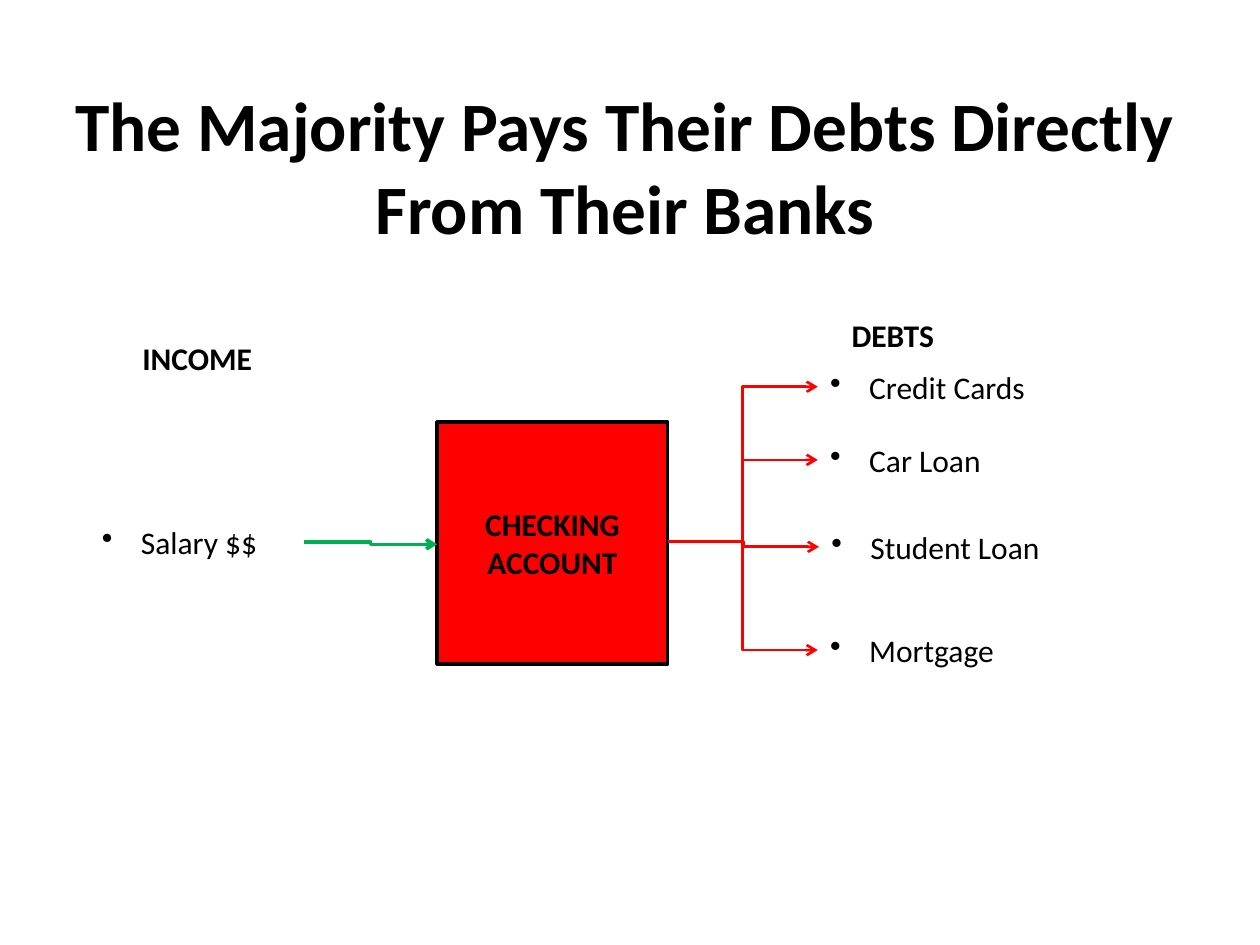
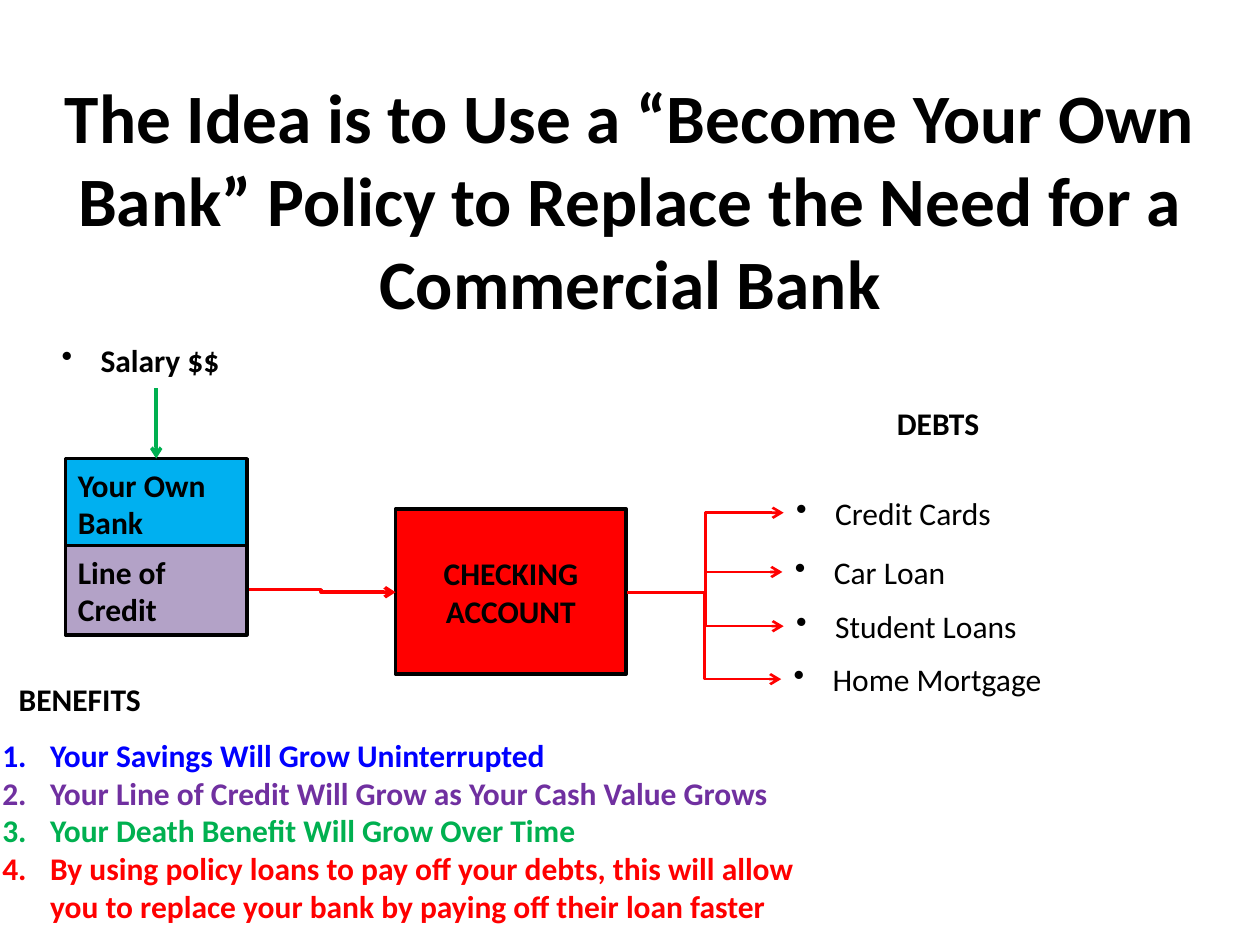
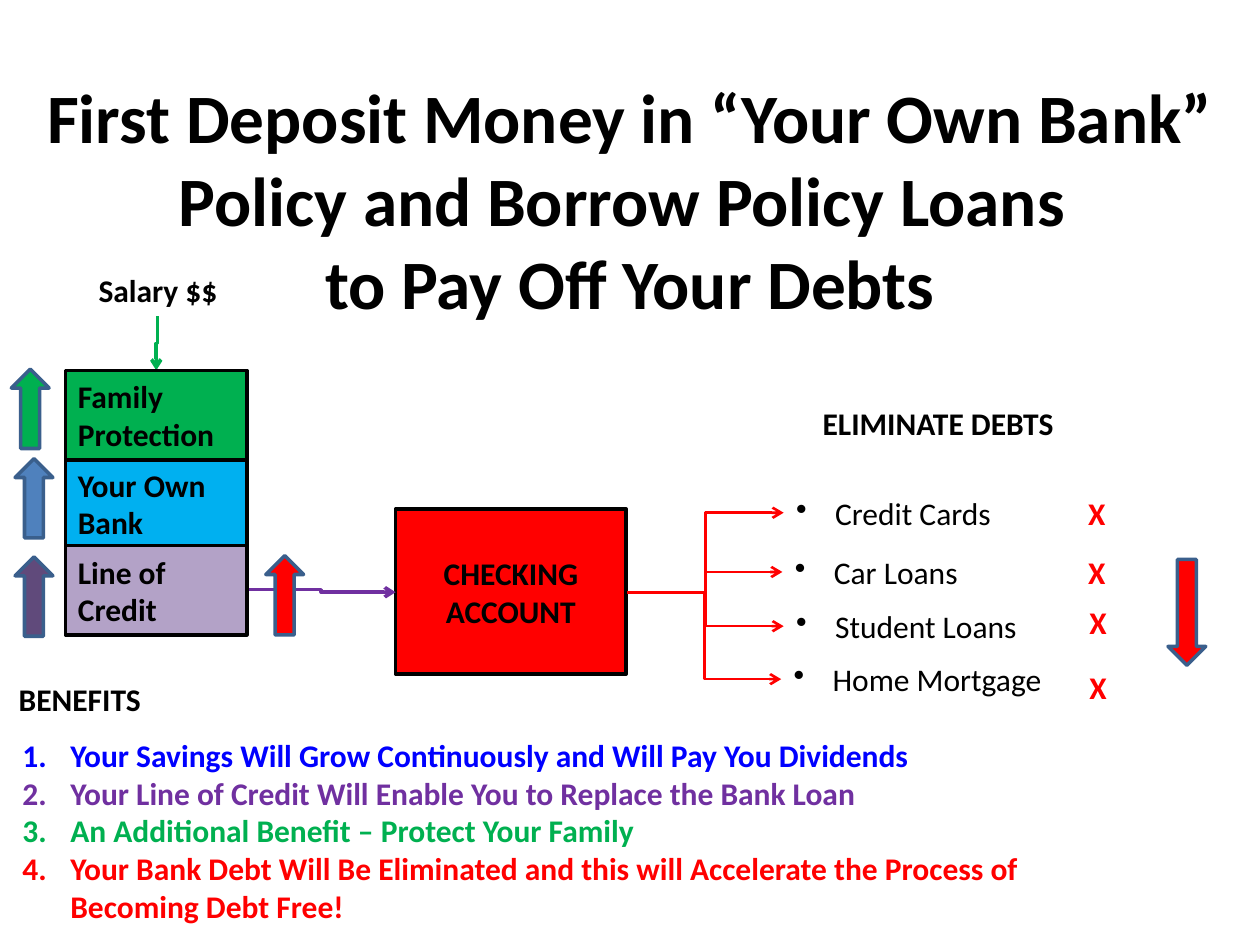
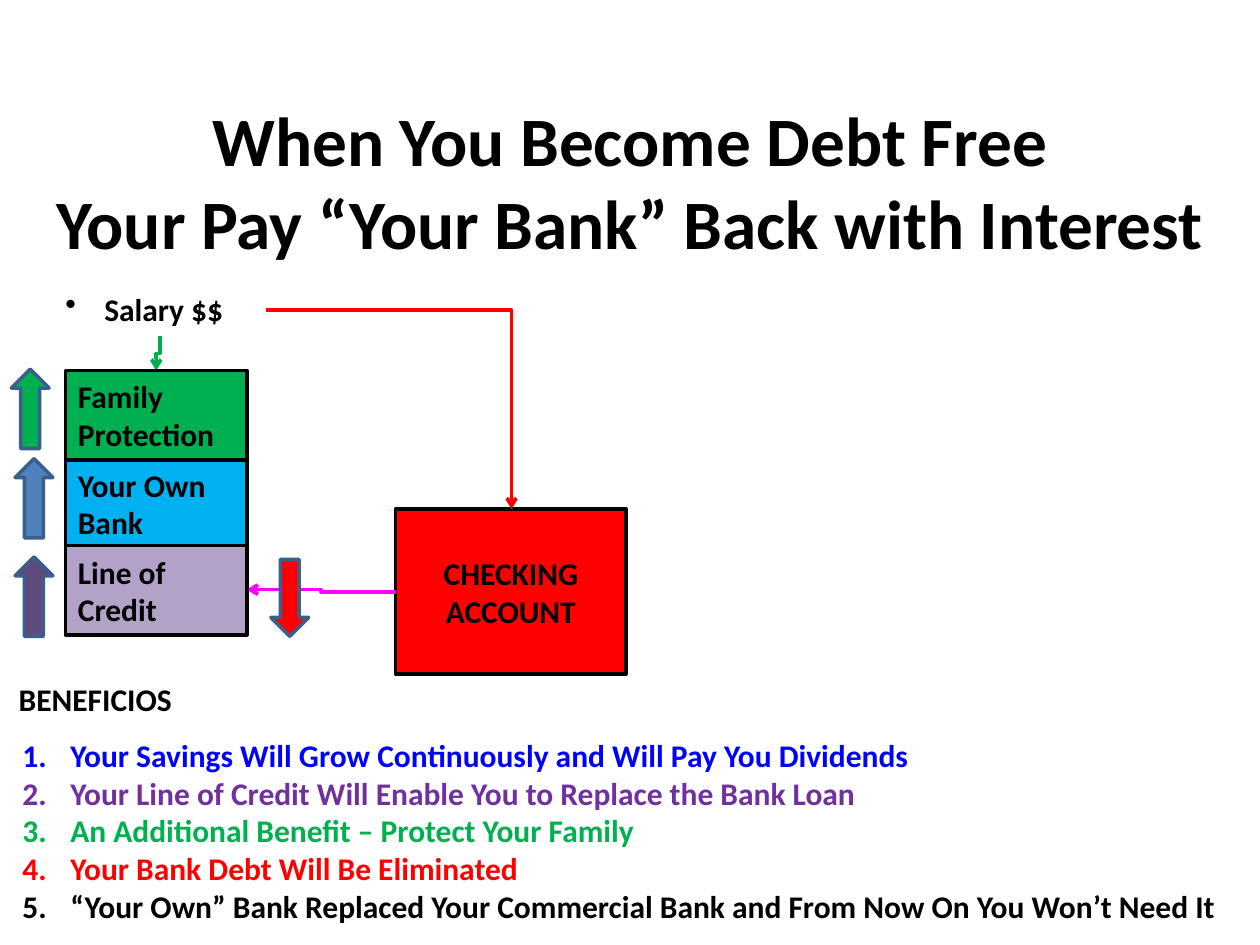
from dataclasses import dataclass

from lxml.etree import SubElement as sub
from pptx import Presentation
from pptx.dml.color import RGBColor as RGB
from pptx.enum.shapes import MSO_CONNECTOR as LINK, MSO_SHAPE as SHAPE
from pptx.enum.text import MSO_ANCHOR as ANCHOR, MSO_AUTO_SIZE as FIT, PP_ALIGN as ALIGN
from pptx.oxml.ns import qn
from pptx.util import Emu, Pt

SCALE = 9144


@dataclass(frozen=True)
class Theme:
    face: str = "Calibri"
    head: float = 39.6
    body: float = 18
    thick: float = 2
    thin: float = 1.5
    black: str = "000000"
    red: str = "FF0000"
    green: str = "00B050"
    sky: str = "00B0F0"
    lilac: str = "B3A2C7"
    blue: str = "0000FF"
    purple: str = "7030A0"
    pink: str = "FF00FF"
    steel: str = "4F81BD"
    plum: str = "604A7B"
    edge: str = "3A5F8C"


T = Theme()
RANKS = (T.blue, T.purple, T.green, T.red, T.black)
STACK = (("Your Own Bank", T.sky, 364), ("Line of Credit", T.lilac, 433))
SHIELD = ("Family\nProtection", T.green, 294)
RISES = ((12, 364, T.steel), (12, 442, T.plum), (9, 293, T.green))
SPOTS = ((622, 387), (621, 434), (622, 477), (620, 519))
CHECK = (314, 404, 183, 131)
HUB = (498, 470)
CREDIT = (196, 468)
DESK = (314, 470)


def px(*nums):
    return [Emu(round(n * SCALE)) for n in nums]


class Deck:
    def __init__(self):
        self.prs = Presentation()
        self.prs.slide_width, self.prs.slide_height = px(1000, 750)
        self.slide = None

    def page(self, title, *area):
        self.slide = self.prs.slides.add_slide(self.prs.slide_layouts[5])
        head = self.slide.shapes.title
        head.left, head.top, head.width, head.height = px(*area)
        frame = head.text_frame
        frame.auto_size = FIT.NONE
        frame.vertical_anchor = ANCHOR.MIDDLE
        self.label(frame, [title], size=T.head, bold=True, align=ALIGN.CENTER)

    def label(self, frame, lines, tints=(T.black,), size=T.body, bold=False,
              align=ALIGN.LEFT, mark=None):
        frame.word_wrap = True
        for i, line in enumerate(lines):
            para = frame.add_paragraph() if i else frame.paragraphs[0]
            para.text = line
            para.alignment = align
            if mark:
                self.bullet(para, mark)
            font = para.font
            font.name, font.size, font.bold = T.face, Pt(size), bold
            font.color.rgb = RGB.from_string(tints[i % len(tints)])

    def bullet(self, para, mark):
        prop = para._p.get_or_add_pPr()
        dent = px(31 if mark == "•" else 38)[0]
        prop.set("marL", str(dent))
        prop.set("indent", str(-dent))
        if mark == "•":
            sub(prop, qn("a:buChar")).set("char", mark)
        else:
            sub(prop, qn("a:buAutoNum")).set("type", mark)

    def text(self, lines, x, y, wide, tall=40, **style):
        frame = self.slide.shapes.add_textbox(*px(x, y, wide, tall)).text_frame
        self.label(frame, lines, **style)
        frame.auto_size = FIT.SHAPE_TO_FIT_TEXT

    def shape(self, kind, area, fill, edge):
        item = self.slide.shapes.add_shape(kind, *px(*area))
        item.shadow.inherit = False
        item.fill.solid()
        item.fill.fore_color.rgb = RGB.from_string(fill)
        item.line.color.rgb = RGB.from_string(edge)
        item.line.width = Pt(T.thick)
        return item

    def box(self, words, area, fill, align=ALIGN.LEFT):
        item = self.shape(SHAPE.RECTANGLE, area, fill, T.black)
        item.text_frame.vertical_anchor = ANCHOR.MIDDLE
        self.label(item.text_frame, words.split("\n"), bold=True, align=align)
        return item

    def check(self, *area):
        self.box("CHECKING ACCOUNT", area, T.red, ALIGN.CENTER)

    def arrow(self, x, y, fill, tall=63, kind=SHAPE.UP_ARROW):
        self.shape(kind, (x, y, 30, tall), fill, T.edge)

    def link(self, start, end, tint, width=T.thick, kind=LINK.ELBOW):
        line = self.slide.shapes.add_connector(kind, *px(*start, *end))
        line.line.color.rgb = RGB.from_string(tint)
        line.line.width = Pt(width)
        prop = line.element.spPr
        sub(prop.find(qn("a:ln")), qn("a:tailEnd")).set("type", "arrow")
        sub(prop, qn("a:effectLst"))
        return line

    def drop(self, start, end, tint):
        (x1, y1), (x2, y2) = start, end
        mid, row = (x1 + x2) / 2, (y1 + y2) / 2
        run, rise = (y2 - y1) / 2, (x1 - x2) / 2
        line = self.link((mid - run, row - rise), (mid + run, row + rise), tint)
        line.element.spPr.find(qn("a:xfrm")).set("rot", "5400000")

    def corner(self, start, end, tint):
        line = self.link(start, end, tint)
        line.element.spPr.find(qn("a:prstGeom")).set("prst", "bentConnector2")

    def debts(self, names, spots=SPOTS, hub=HUB):
        for name, (x, y) in zip(names, spots):
            self.text([name], x, y, 292, mark="•")
            self.link(hub, (x, y + 20), T.red, T.thin)

    def stack(self, parts):
        return [self.box(words, (52, y, 144, 71), fill) for words, fill, y in parts]

    def gains(self, head, lines, x, wide):
        self.text(lines, x, 579, wide, 162, tints=RANKS, bold=True, mark="arabicPeriod")
        self.text([head], 5, 535, 170, bold=True)

    def rises(self):
        for x, y, fill in RISES:
            self.arrow(x, y, fill)


def main():
    deck = Deck()

    deck.page("The Majority Pays Their Debts Directly From Their Banks", 46, 69, 900, 125)
    deck.text(["INCOME"], 44, 264, 225, bold=True, align=ALIGN.CENTER)
    deck.text(["DEBTS"], 666, 246, 225, bold=True)
    deck.text(["Salary $$"], 71, 410, 170, mark="•")
    deck.check(347, 335, 183, 192)
    deck.link((241, 430), (347, 432), T.green)
    deck.debts(("Credit Cards", "Car Loan", "Student Loan", "Mortgage"),
               ((649, 287), (649, 345), (650, 414), (649, 496)), (530, 430))

    deck.page("The Idea is to Use a “Become Your Own Bank” Policy to Replace the Need "
              "for a Commercial Bank", 0, 69, 1000, 178)
    deck.text(["DEBTS"], 632, 316, 225, bold=True, align=ALIGN.CENTER)
    deck.check(*CHECK)
    deck.link(CREDIT, DESK, T.red)
    deck.debts(("Credit Cards", "Car Loan", "Student Loans", "Home Mortgage"))
    deck.text(["Salary $$"], 39, 266, 170, bold=True, mark="•")
    bank = deck.stack(STACK)[0]
    deck.link((124, 308), (124, 364), T.green, kind=LINK.STRAIGHT).end_connect(bank, 0)
    deck.gains("BENEFITS", (
        "Your Savings Will Grow Uninterrupted",
        "Your Line of Credit Will Grow as Your Cash Value Grows",
        "Your Death Benefit Will Grow Over Time",
        "By using policy loans to pay off your debts, this will allow you to replace "
        "your bank by paying off their loan faster"), -8, 650)

    shared = (
        "Your Savings Will Grow Continuously and Will Pay You Dividends",
        "Your Line of Credit Will Enable You to Replace the Bank Loan",
        "An Additional Benefit – Protect Your Family")

    deck.page("First Deposit Money in “Your Own Bank” Policy and Borrow Policy Loans \v"
              "to Pay Off Your Debts", 0, 69, 1000, 178)
    deck.text(["ELIMINATE DEBTS"], 632, 316, 225, bold=True, align=ALIGN.CENTER)
    deck.check(*CHECK)
    deck.link(CREDIT, DESK, T.purple)
    deck.debts(("Credit Cards", "Car Loans", "Student Loans", "Home Mortgage"))
    deck.text(["Salary $$"], 42, 210, 167, bold=True, align=ALIGN.CENTER)
    deck.drop((125, 251), (124, 294), T.green)
    deck.stack((*STACK, SHIELD))
    deck.gains("BENEFITS", (
        *shared,
        "Your Bank Debt Will Be Eliminated and this will Accelerate the Process of "
        "Becoming Debt Free!"), 8, 849)
    deck.rises()
    deck.arrow(927, 444, T.red, 84, SHAPE.DOWN_ARROW)
    for x, y in ((842, 387), (842, 434), (843, 474), (843, 525)):
        deck.text(["X"], x, y, 57, tints=(T.red,), bold=True, align=ALIGN.CENTER)
    deck.arrow(211, 441, T.red)

    deck.page("When You Become Debt Free\vYour Pay “Your Bank” Back with Interest",
              0, 54, 1000, 178)
    deck.check(*CHECK)
    deck.link(DESK, CREDIT, T.pink)
    deck.text(["Salary $$"], 42, 225, 170, bold=True, mark="•")
    deck.drop((127, 267), (124, 294), T.green)
    deck.stack((*STACK, SHIELD))
    deck.gains("BENEFICIOS", (
        *shared,
        "Your Bank Debt Will Be Eliminated",
        "“Your Own” Bank Replaced Your Commercial Bank and From Now On You Won’t Need It"),
        8, 1000)
    deck.rises()
    deck.corner((211, 246), (406, 404), T.red)
    deck.arrow(215, 444, T.red, 61, SHAPE.DOWN_ARROW)

    deck.prs.save("out.pptx")


if __name__ == "__main__":
    main()
